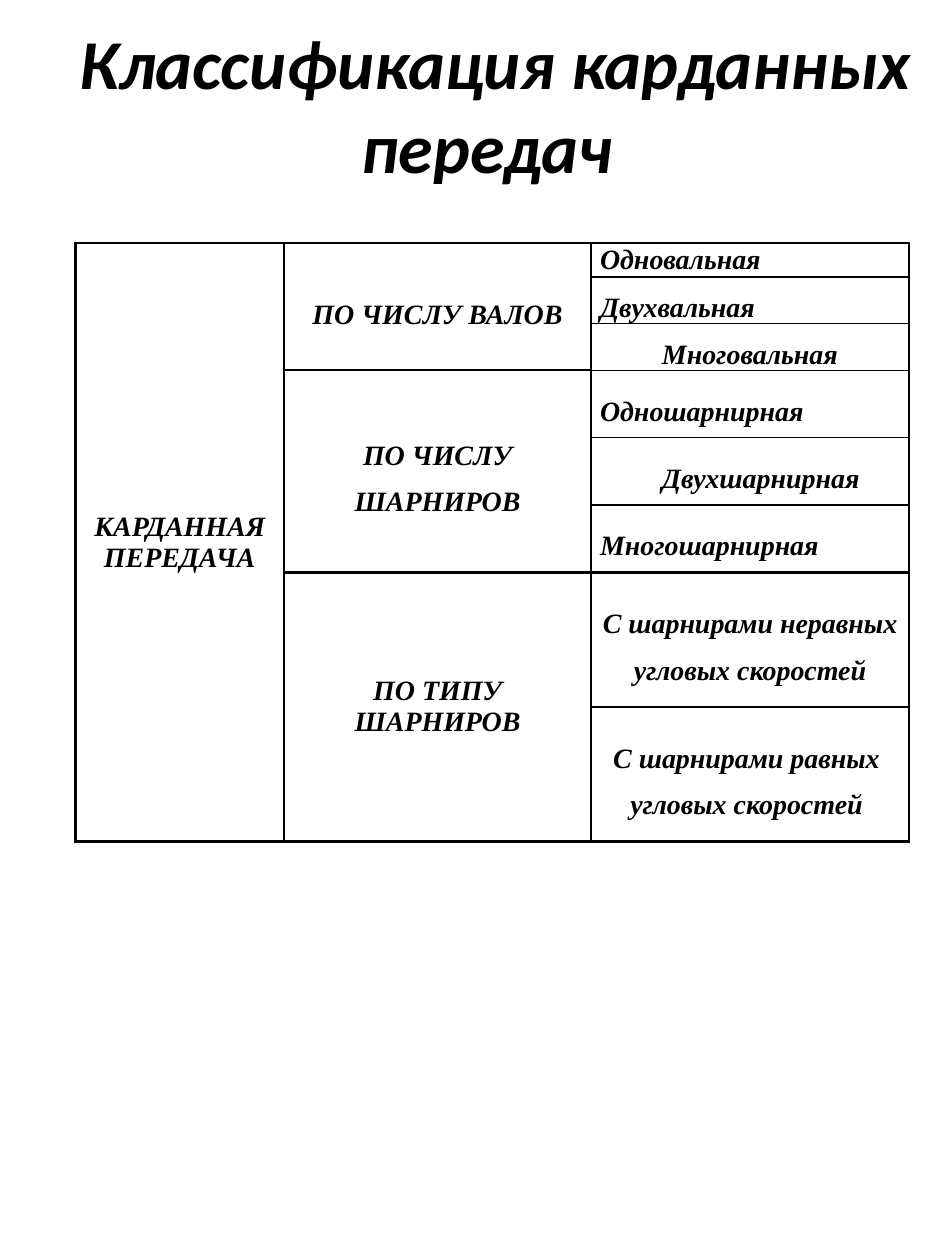
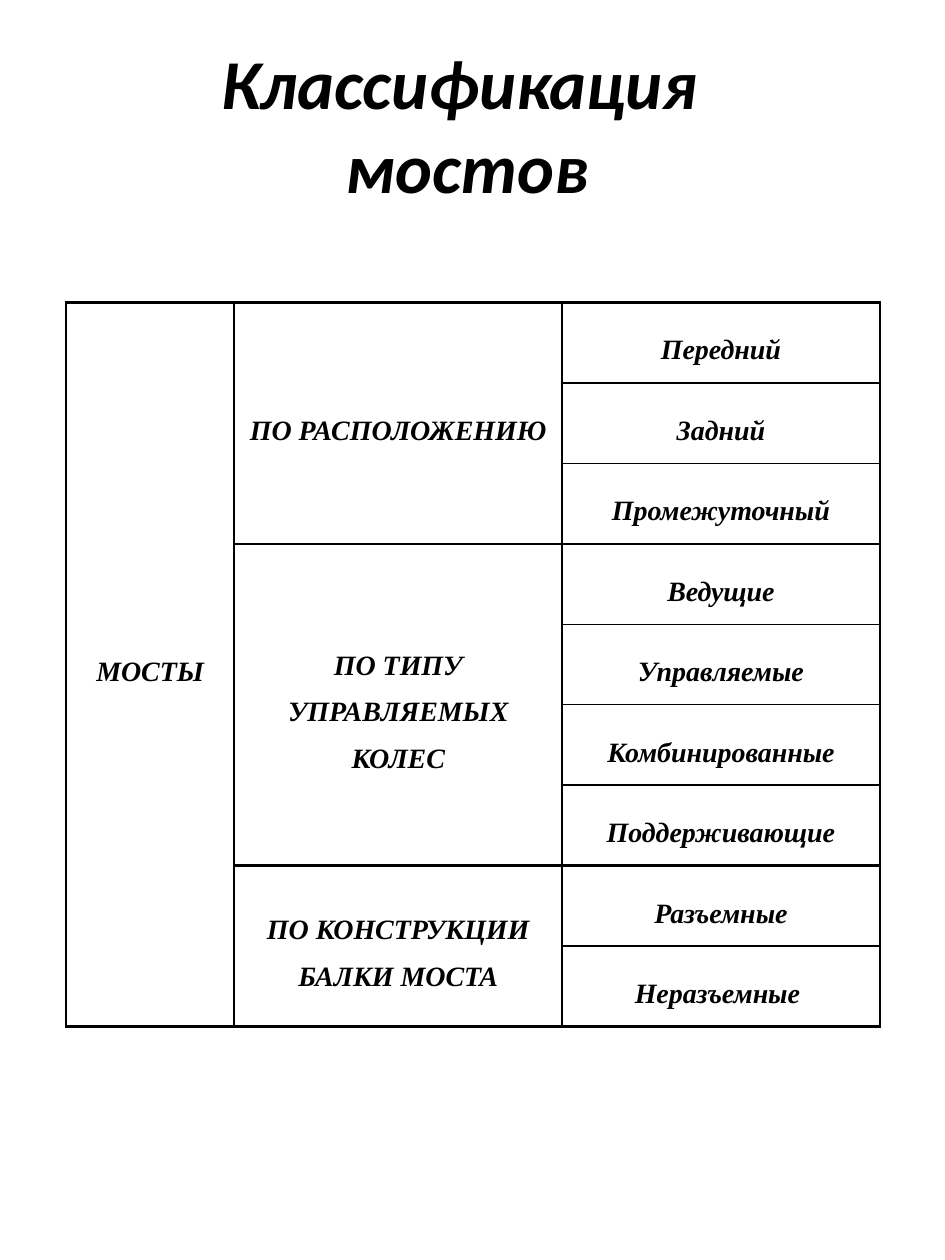
from dataclasses import dataclass

from lxml import etree
from pptx import Presentation
from pptx.dml.color import RGBColor
from pptx.enum import text
from pptx.oxml import ns
from pptx.util import Pt

COLOURS = {"ink": "000000", "paper": "FFFFFF"}
LEFT, CENTER = text.PP_ALIGN.LEFT, text.PP_ALIGN.CENTER
THICK, THIN = 1.5, 1


@dataclass
class Entry:
    """Text of one table cell; each line of it is a paragraph."""
    words: str
    align: int = CENTER
    spacing: float = 1.5
    indent: float = 0


class ClassificationDeck:
    title_font, title_size = "Calibri", 40
    table_font, table_size = "Times New Roman", 16
    side_margin = 5

    def __init__(self):
        self.deck = Presentation()
        self.deck.slide_width, self.deck.slide_height = Pt(540), Pt(720)
        self.page = None

    def add_page(self):
        self.page = self.deck.slides.add_slide(self.deck.slide_layouts[0])
        fill = self.page.background.fill
        fill.solid()
        fill.fore_color.rgb = RGBColor.from_string(COLOURS["paper"])
        subtitle = self.page.placeholders[1].element
        subtitle.getparent().remove(subtitle)

    def add_span(self, para, words, font, size):
        span = para.add_run()
        span.text = words
        span.font.name, span.font.size = font, Pt(size)
        span.font.bold = span.font.italic = True
        span.font.color.rgb = RGBColor.from_string(COLOURS["ink"])

    def add_title(self, lines, width, height):
        box = self.page.shapes.title
        box.left, box.top, box.width, box.height = Pt(26), Pt(25), Pt(width), Pt(height)
        frame = box.text_frame
        frame.word_wrap = True
        frame.auto_size = text.MSO_AUTO_SIZE.NONE
        frame.vertical_anchor = text.MSO_ANCHOR.MIDDLE
        para = frame.paragraphs[0]
        para.alignment = CENTER
        for number, line in enumerate(lines):
            if number:
                para.add_line_break()
            self.add_span(para, line, self.title_font, self.title_size)

    def style_cell(self, cell, top=THICK, bottom=THICK):
        """Set margins and the four border widths, and clear the fill."""
        cell.margin_left = cell.margin_right = Pt(self.side_margin)
        cell.margin_top = cell.margin_bottom = 0
        cell.vertical_anchor = text.MSO_ANCHOR.MIDDLE
        properties = cell._tc.get_or_add_tcPr()
        for side, width in zip("LRTB", (THICK, THICK, top, bottom)):
            line = etree.SubElement(properties, ns.qn(f"a:ln{side}"), w=str(Pt(width)))
            solid = etree.SubElement(line, ns.qn("a:solidFill"))
            etree.SubElement(solid, ns.qn("a:srgbClr"), val=COLOURS["ink"])
        cell.fill.background()

    def write_cell(self, cell, entry):
        frame = cell.text_frame
        for number, line in enumerate(entry.words.split("\n")):
            para = frame.add_paragraph() if number else frame.paragraphs[0]
            para.alignment, para.line_spacing = entry.align, entry.spacing
            if entry.indent:
                para._p.get_or_add_pPr().set("indent", str(Pt(entry.indent)))
            self.add_span(para, line, self.table_font, self.table_size)

    def add_tree_table(self, left, top, widths, heights, root, groups):
        """Draw a root cell, merged group cells and one row for each kind."""
        count = len(heights)
        table = self.page.shapes.add_table(
            count, 3, Pt(left), Pt(top), Pt(sum(widths)), Pt(sum(heights))).table
        table.first_row = table.horz_banding = False
        for column, width in zip(table.columns, widths):
            column.width = Pt(width)
        for row, height in zip(table.rows, heights):
            row.height = Pt(height)
        for row in range(count):
            self.style_cell(table.cell(row, 0))
            self.style_cell(table.cell(row, 1))

        table.cell(0, 0).merge(table.cell(count - 1, 0))
        self.write_cell(table.cell(0, 0), root)
        row = 0
        for number, (heading, kinds) in enumerate(groups):
            first, last = row, row + len(kinds) - 1
            table.cell(first, 1).merge(table.cell(last, 1))
            self.write_cell(table.cell(first, 1), heading)
            for row, kind in enumerate(kinds, first):
                # The line between the first two groups is thin in this column.
                self.style_cell(
                    table.cell(row, 2),
                    top=THICK if row == first and number != 1 else THIN,
                    bottom=THICK if row == last and number != 0 else THIN)
                self.write_cell(table.cell(row, 2), kind)
            row = last + 1


def add_shafts_page(deck):
    deck.add_page()
    deck.add_title(["Классификация карданных передач "], 514, 68)
    groups = [
        (Entry("ПО ЧИСЛУ ВАЛОВ"),
         [Entry("Одновальная", LEFT, 1), Entry("Двухвальная", LEFT),
          Entry("Многовальная", LEFT, indent=35.4)]),
        (Entry("ПО ЧИСЛУ ШАРНИРОВ"),
         [Entry("Одношарнирная", LEFT), Entry("Двухшарнирная", LEFT, indent=35.4),
          Entry("Многошарнирная", LEFT)]),
        (Entry("ПО ТИПУ ШАРНИРОВ", spacing=1),
         [Entry("С шарнирами неравных \nугловых скоростей"),
          Entry("С шарнирами равных \nугловых скоростей ")]),
    ]
    heights = [19.3] * 3 + [38.5] * 3 + [76.9] * 2
    deck.add_tree_table(43.2, 139, [119, 175.7, 181.4], heights,
                        Entry("КАРДАННАЯ ПЕРЕДАЧА", spacing=1), groups)


def add_axles_page(deck):
    deck.add_page()
    deck.add_title(["Классификация ", "мостов"], 482, 91)
    names = {
        "ПО РАСПОЛОЖЕНИЮ": ["Передний", "Задний", "Промежуточный"],
        "ПО ТИПУ УПРАВЛЯЕМЫХ КОЛЕС": ["Ведущие", "Управляемые", "Комбинированные",
                                      "Поддерживающие"],
        "ПО КОНСТРУКЦИИ БАЛКИ МОСТА": ["Разъемные", "Неразъемные "],
    }
    groups = [(Entry(heading), [Entry(kind) for kind in kinds])
              for heading, kinds in names.items()]
    deck.add_tree_table(37.7, 172.8, [96.2, 187.4, 181.4], [46] * 9,
                        Entry("МОСТЫ"), groups)


def main():
    deck = ClassificationDeck()
    add_shafts_page(deck)
    add_axles_page(deck)
    deck.deck.save("out.pptx")


if __name__ == "__main__":
    main()
